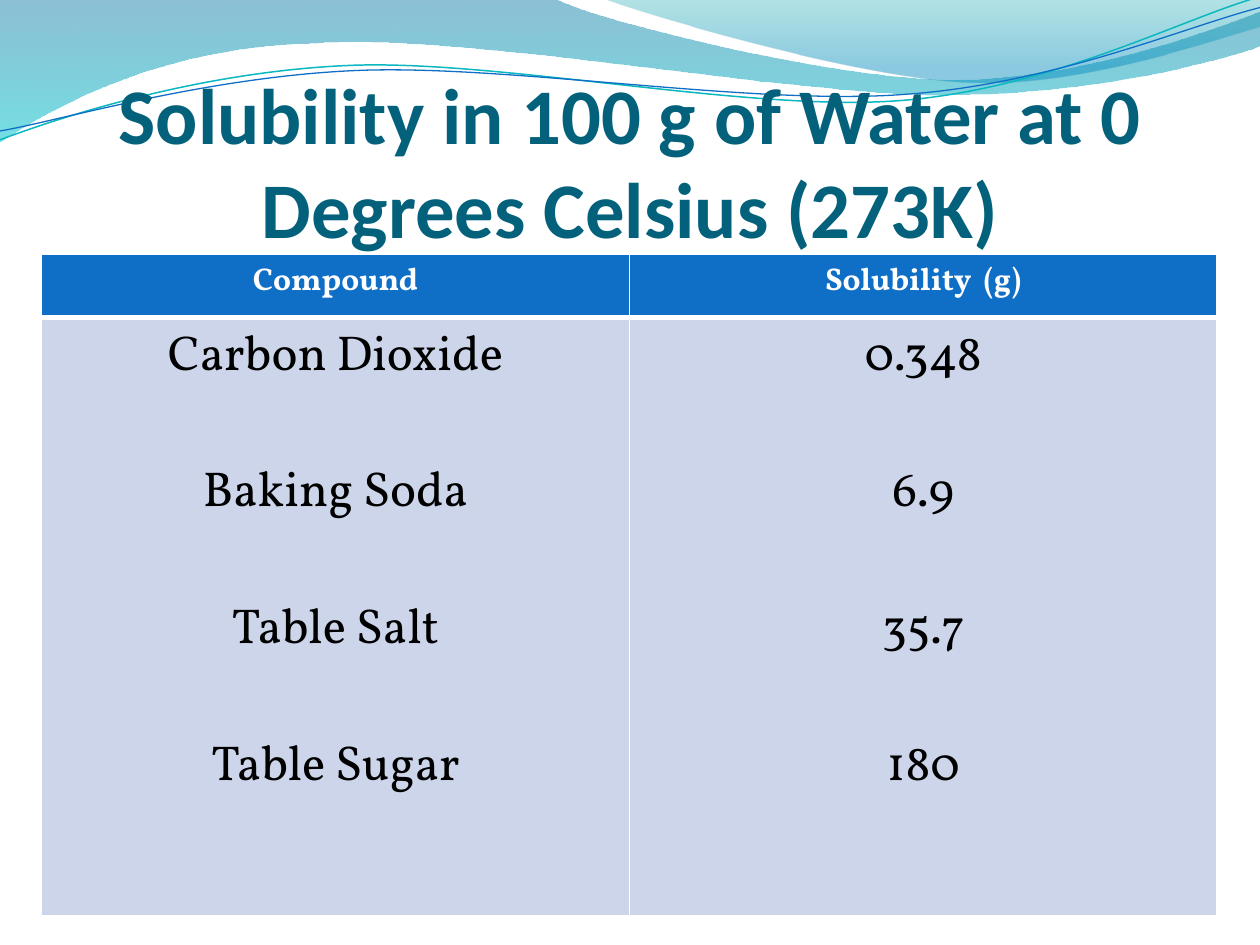
import dataclasses

import lxml.etree
import pptx
import pptx.dml.color
import pptx.enum.text
import pptx.oxml
import pptx.oxml.ns
import pptx.util

Inches = pptx.util.Inches
Pt = pptx.util.Pt
qn = pptx.oxml.ns.qn
CENTER = pptx.enum.text.PP_ALIGN.CENTER


@dataclasses.dataclass(frozen=True)
class Theme:
    heading_font: str = "Calibri"
    body_font: str = "Vollkorn"
    title_size: int = 45
    header_size: int = 18
    body_size: int = 28
    body_gap: int = 39
    title: str = "04617B"
    header: str = "0F6FC6"
    band: str = "CCD5EA"
    white: str = "FFFFFF"
    black: str = "000000"
    teal_line: str = "0AB8BF"
    blue_line: str = "0F6FC6"
    back_wave: tuple = ((0, "0074A1", 45), (1, "00C6CF", 55))
    front_wave: tuple = ((0, "00A1A9", 30), (0.8, "008BBF", 45))


def rgb(value):
    return pptx.dml.color.RGBColor.from_string(value)


def write_text(tf, text, *, font, size, color, bold=False, gap=0):
    for i, line in enumerate(text.split("\n")):
        p = tf.paragraphs[0] if i == 0 else tf.add_paragraph()
        p.alignment = CENTER
        p.space_before = Pt(0)
        p.space_after = Pt(gap)
        r = p.add_run()
        r.text = line
        r.font.name = font
        r.font.size = Pt(size)
        r.font.bold = bold
        r.font.color.rgb = rgb(color)


class SlideBuilder:
    def __init__(self, prs, theme):
        self.theme = theme
        self.s = prs.slides.add_slide(prs.slide_layouts[5])
        self.s.background.fill.solid()
        self.s.background.fill.fore_color.rgb = rgb(theme.white)

    def curve(self, start, segments, close):
        anchors = [(Inches(seg[-2]), Inches(seg[-1])) for seg in segments]
        builder = self.s.shapes.build_freeform(Inches(start[0]), Inches(start[1]), scale=1.0)
        builder.add_line_segments(anchors, close=close)
        sp = builder.convert_to_shape()
        sp.shadow.inherit = False
        for step, seg in zip(list(sp._element.spPr.iter(qn("a:lnTo"))), segments):
            if len(seg) == 6:
                bezier = lxml.etree.Element(qn("a:cubicBezTo"))
                for x, y in zip(seg[::2], seg[1::2]):
                    lxml.etree.SubElement(bezier, qn("a:pt"), x=str(Inches(x) - sp.left),
                                          y=str(Inches(y) - sp.top))
                step.getparent().replace(step, bezier)
        return sp

    def wave(self, start, segments, stops):
        sp = self.curve(start, segments, True)
        sp.line.fill.background()
        sp.fill.gradient()
        sp.fill.gradient_angle = 270
        for stop, (position, color, _) in zip(sp.fill.gradient_stops, stops):
            stop.position = position
            stop.color.rgb = rgb(color)
        for clr, (_, _, opacity) in zip(sp._element.spPr.iter(qn("a:srgbClr")), stops):
            lxml.etree.SubElement(clr, qn("a:alpha"), val=str(opacity * 1000))

    def ripple(self, start, segments, color, width):
        sp = self.curve(start, segments, False)
        sp.fill.background()
        sp.line.color.rgb = rgb(color)
        sp.line.width = Pt(width)

    def title(self, text, left, top, width, height):
        t = self.theme
        sp = self.s.shapes.title
        sp.left, sp.top, sp.width, sp.height = map(Inches, (left, top, width, height))
        self.s.shapes._spTree.append(sp._element)
        tf = sp.text_frame
        tf.word_wrap = True
        tf.auto_size = pptx.enum.text.MSO_AUTO_SIZE.NONE
        tf.vertical_anchor = pptx.enum.text.MSO_ANCHOR.BOTTOM
        tf.margin_left = tf.margin_right = tf.margin_bottom = 0
        tf.margin_top = Inches(0.05)
        write_text(tf, text, font=t.heading_font, size=t.title_size, color=t.title, bold=True)

    def borders(self, cell, widths):
        tcPr = cell._tc.get_or_add_tcPr()
        for side, width in widths.items():
            ln = lxml.etree.SubElement(tcPr, qn(f"a:ln{side}"), w=str(Pt(width)))
            fill = lxml.etree.SubElement(ln, qn("a:solidFill"))
            lxml.etree.SubElement(fill, qn("a:srgbClr"), val=self.theme.white)

    def table(self, rows, heights, left, top, width):
        t = self.theme
        header = dict(size=t.header_size, color=t.white, bold=True)
        body = dict(size=t.body_size, color=t.black, gap=t.body_gap)
        looks = [(header, t.header, dict(L=1, R=1, T=1, B=3)),
                 (body, t.band, dict(L=1, R=1, T=3, B=1))]
        table = self.s.shapes.add_table(
            len(rows), len(rows[0]), Inches(left), Inches(top),
            Inches(width), Inches(sum(heights))).table
        for row, texts, height, (style, color, edges) in zip(table.rows, rows, heights, looks):
            row.height = Inches(height)
            for cell, text in zip(row.cells, texts):
                self.borders(cell, edges)
                cell.fill.solid()
                cell.fill.fore_color.rgb = rgb(color)
                write_text(cell.text_frame, text, font=t.body_font, **style)


def main():
    prs = pptx.Presentation()
    prs.slide_width, prs.slide_height = Inches(10), Inches(7.5)
    theme = Theme()
    slide = SlideBuilder(prs, theme)

    slide.wave((0, 0), [
        (4.4, -0.01), (4.76, 0.17, 6.64, 0.63, 7.58, 0.63),
        (8.53, 0.63, 9.58, 0.26, 10, 0.09), (10.01, 0.36),
        (9.83, 0.44, 8.7, 0.76, 7.46, 0.75), (6.22, 0.75, 3.82, 0.28, 2.57, 0.34),
        (1.29, 0.36, 0.46, 0.83, -0.01, 1.13), (0, 0)], theme.back_wave)
    slide.wave((4.79, -0.01), [
        (5.09, 0.11, 6.82, 0.62, 7.69, 0.65), (8.56, 0.69, 9.61, 0.32, 10, 0.21),
        (10, 0), (4.79, -0.01)], theme.front_wave)
    slide.ripple((0, 1.11), [
        (0.48, 0.93, 1.58, 0.57, 2.77, 0.52), (3.95, 0.47, 5.93, 0.89, 7.13, 0.8),
        (8.33, 0.71, 9.38, 0.15, 9.98, -0.02)], theme.teal_line, 0.85)
    slide.ripple((0, 1.04), [
        (0.47, 0.96, 1.64, 0.61, 2.83, 0.56), (4.03, 0.51, 5.97, 0.84, 7.17, 0.75),
        (8.36, 0.67, 9.41, 0.21, 10, 0.06)], theme.blue_line, 0.75)

    slide.title("Solubility in 100 g of Water at 0 Degrees Celsius (273K)", 0.5, 0.77, 9, 1.25)
    slide.table([
        ("Compound", "Solubility  (g)"),
        ("Carbon Dioxide\nBaking Soda\nTable Salt\nTable Sugar", "0.348\n6.9\n35.7\n180"),
    ], (0.5, 4.75), 0.33, 2.02, 9.33)
    prs.save("out.pptx")


if __name__ == "__main__":
    main()
